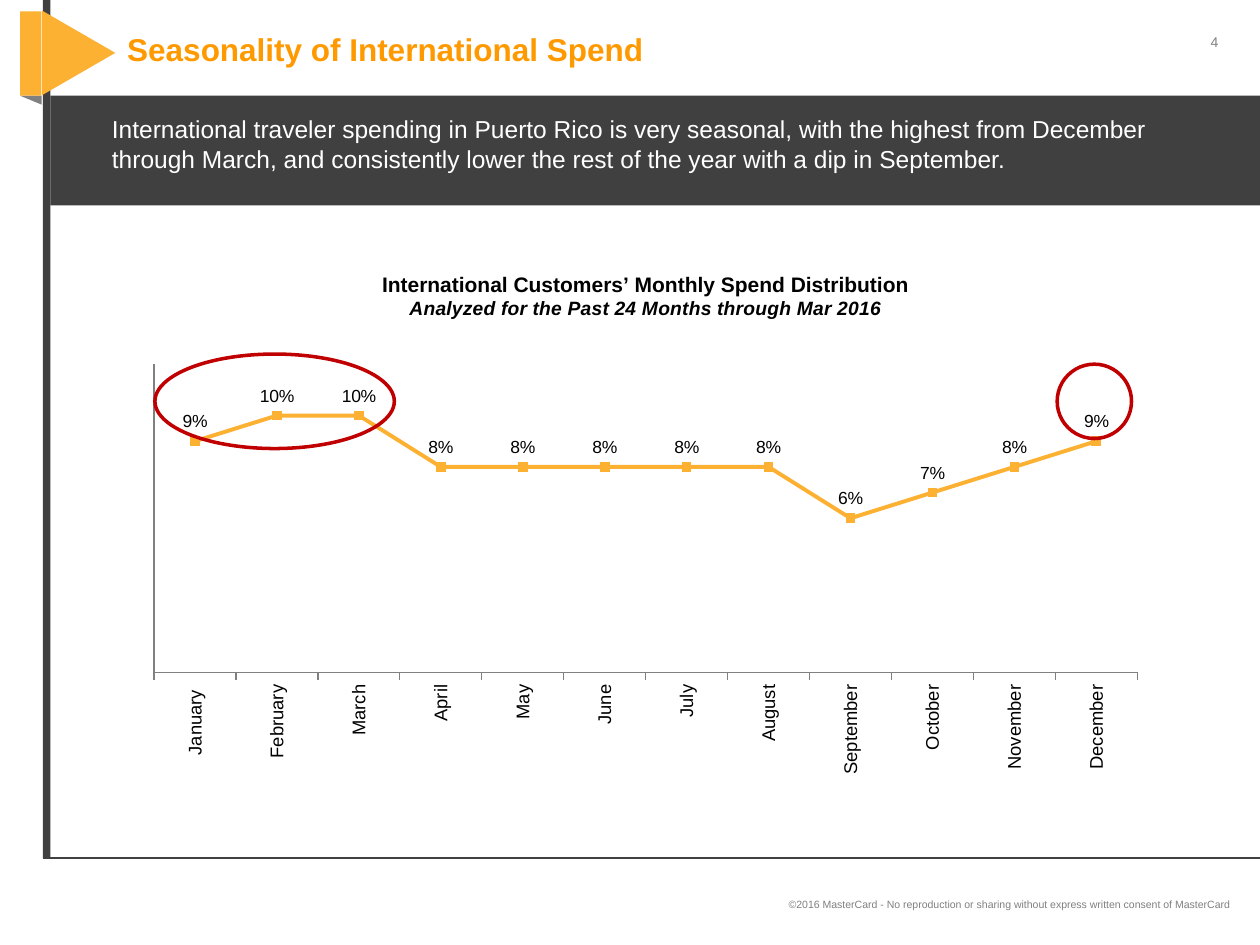
from pptx import Presentation
from pptx import util as u
from pptx.chart import data
from pptx.dml.color import RGBColor
from pptx.enum import chart as charts, shapes, text
from pptx.oxml import parse_xml
from pptx.oxml.ns import nsdecls, qn

ORANGE = RGBColor(0xFC, 0xB1, 0x33)
TITLE_ORANGE = RGBColor(0xFF, 0x99, 0x00)
CHARCOAL = RGBColor(0x40, 0x40, 0x40)
GREY = RGBColor(0x80, 0x80, 0x80)
RED = RGBColor(0xC0, 0x00, 0x00)
WHITE = RGBColor(0xFF, 0xFF, 0xFF)
BLACK = RGBColor(0x00, 0x00, 0x00)

SPEND = {
    "January ": 0.09, "February": 0.10, "March": 0.10, "April": 0.08,
    "May": 0.08, "June": 0.08, "July": 0.08, "August": 0.08,
    "September": 0.06, "October": 0.07, "November": 0.08, "December": 0.09,
}
Shape = shapes.MSO_SHAPE
Align = text.PP_ALIGN
Anchor = text.MSO_ANCHOR


class SlideBuilder:
    font_name = "Arial"

    def __init__(self, page):
        self.page = page

    def lengths(self, at):
        return [u.Inches(value) for value in at]

    def style(self, font, size, color, bold=False, italic=False):
        font.name = self.font_name
        font.size = u.Pt(size)
        font.color.rgb = color
        font.bold = bold
        font.italic = italic

    def span(self, para, words, size, color, bold=False, italic=False):
        span = para.add_run()
        span.text = words
        self.style(span.font, size, color, bold, italic)

    def title(self, words, at):
        box = self.page.shapes.title
        box.left, box.top, box.width, box.height = self.lengths(at)
        frame = box.text_frame
        frame.auto_size = text.MSO_AUTO_SIZE.NONE
        frame.vertical_anchor = Anchor.MIDDLE
        para = frame.paragraphs[0]
        para.alignment = Align.LEFT
        para.line_spacing = u.Pt(16)
        self.span(para, words, 18, TITLE_ORANGE, bold=True)

    def label(self, words, at, size, color, align=Align.LEFT, anchor=Anchor.TOP):
        frame = self.page.shapes.add_textbox(*self.lengths(at)).text_frame
        frame.word_wrap = True
        frame.vertical_anchor = anchor
        para = frame.paragraphs[0]
        para.alignment = align
        self.span(para, words, size, color)

    def block(self, kind, at, color, rotation=0):
        block = self.page.shapes.add_shape(kind, *self.lengths(at))
        block.shadow.inherit = False
        block.rotation = rotation
        block.fill.solid()
        block.fill.fore_color.rgb = color
        block.line.fill.background()

    def ring(self, at):
        ring = self.page.shapes.add_shape(Shape.OVAL, *self.lengths(at))
        ring.shadow.inherit = False
        ring.fill.background()
        ring.line.color.rgb = RED
        ring.line.width = u.Pt(2)

    def rule(self, ends, color, width):
        rule = self.page.shapes.add_connector(
            shapes.MSO_CONNECTOR.STRAIGHT, *self.lengths(ends))
        rule.line.color.rgb = color
        rule.line.width = u.Pt(width)
        rule._element.spPr.append(parse_xml(f"<a:effectLst {nsdecls('a')}/>"))

    def line_chart(self, values, at, plot, heading):
        source = data.CategoryChartData(number_format="0%")
        source.categories = list(values)
        source.add_series("Series 1", list(values.values()))
        chart = self.page.shapes.add_chart(
            charts.XL_CHART_TYPE.LINE_MARKERS, *self.lengths(at), source).chart
        chart.has_legend = False
        self.style(chart.font, 12, BLACK)
        self.chart_title(chart, heading)
        self.axes(chart)
        self.series(chart.plots[0])
        self.plot_layout(chart, plot)

    def chart_title(self, chart, heading):
        chart.has_title = True
        chart.chart_title.include_in_layout = True
        frame = chart.chart_title.text_frame
        for index, (words, size, italic) in enumerate(heading):
            para = frame.add_paragraph() if index else frame.paragraphs[0]
            self.span(para, words, size, BLACK, bold=True, italic=italic)

    def axes(self, chart):
        months, share = chart.category_axis, chart.value_axis
        for axis in (months, share):
            axis.has_major_gridlines = False
            axis.minor_tick_mark = charts.XL_TICK_MARK.NONE
            axis.format.line.color.rgb = GREY
            axis.format.line.width = u.Pt(0.75)
        months.major_tick_mark = charts.XL_TICK_MARK.OUTSIDE
        self.style(months.tick_labels.font, 10.5, BLACK)
        months._element.find(qn("c:txPr")).find(qn("a:bodyPr")).set("rot", "-5400000")
        share.major_tick_mark = charts.XL_TICK_MARK.NONE
        share.tick_label_position = charts.XL_TICK_LABEL_POSITION.NONE
        share.minimum_scale, share.maximum_scale = 0, 0.12

    def series(self, plot):
        plot.vary_by_categories = False
        series = plot.series[0]
        series.smooth = False
        series.format.line.color.rgb = ORANGE
        series.format.line.width = u.Pt(2.25)
        marker = series.marker
        marker.style = charts.XL_MARKER_STYLE.SQUARE
        marker.size = 5
        marker.format.fill.solid()
        marker.format.fill.fore_color.rgb = ORANGE
        marker.format.line.color.rgb = ORANGE
        labels = series.data_labels
        labels.show_value = True
        labels.number_format = "0%"
        labels.number_format_is_linked = False
        labels.position = charts.XL_LABEL_POSITION.ABOVE
        self.style(labels.font, 10, BLACK)

    def plot_layout(self, chart, plot):
        area = chart._chartSpace.chart.plotArea
        for old in area.findall(qn("c:layout")):
            area.remove(old)
        x, y, width, height = plot
        area.insert(0, parse_xml(
            f'<c:layout {nsdecls("c")}><c:manualLayout>'
            '<c:layoutTarget val="inner"/><c:xMode val="edge"/><c:yMode val="edge"/>'
            f'<c:x val="{x}"/><c:y val="{y}"/><c:w val="{width}"/><c:h val="{height}"/>'
            '</c:manualLayout></c:layout>'))


def main():
    deck = Presentation()
    deck.slide_width, deck.slide_height = u.Inches(10), u.Inches(7.5)
    slide = SlideBuilder(deck.slides.add_slide(deck.slide_layouts[5]))

    slide.label("4", (9.47, 0.22, 0.34, 0.24), 8, GREY, Align.CENTER)
    slide.label(
        "©2016 MasterCard - No reproduction or sharing without express "
        "written consent of MasterCard",
        (0.11, 6.91, 9.75, 0.54), 6, GREY, Align.RIGHT, Anchor.MIDDLE)

    slide.block(Shape.RECTANGLE, (0.34, 0, 0.06, 6.81), CHARCOAL)
    slide.block(Shape.RIGHT_TRIANGLE, (0.16, 0.76, 0.17, 0.07), GREY, 180)
    slide.block(Shape.ISOSCELES_TRIANGLE, (0.29, 0.13, 0.67, 0.58), ORANGE, 90)
    slide.block(Shape.RECTANGLE, (0.16, 0.09, 0.17, 0.67), ORANGE)
    slide.rule((0.34, 6.81, 10, 6.81), CHARCOAL, 0.75)

    slide.block(Shape.RECTANGLE, (0.4, 0.76, 9.6, 0.87), CHARCOAL)
    slide.label(
        "International traveler spending in Puerto Rico is very seasonal, with the "
        "highest from December through March, and consistently lower the rest of "
        "the year with a dip in September.",
        (0.79, 0.86, 8.83, 0.66), 14, WHITE)
    slide.title("Seasonality of International Spend", (0.91, 0.09, 7.92, 0.67))

    slide.line_chart(
        SPEND, (1.06, 1.99, 8.13, 4.29), (0.02, 0.21, 0.96, 0.57),
        [("International Customers’ Monthly Spend Distribution", 12, False),
         ("Analyzed for the Past 24 Months through Mar 2016", 11, True)])
    slide.ring((8.39, 2.89, 0.59, 0.59))
    slide.ring((1.23, 2.81, 1.9, 0.75))

    deck.save("out.pptx")


if __name__ == "__main__":
    main()
